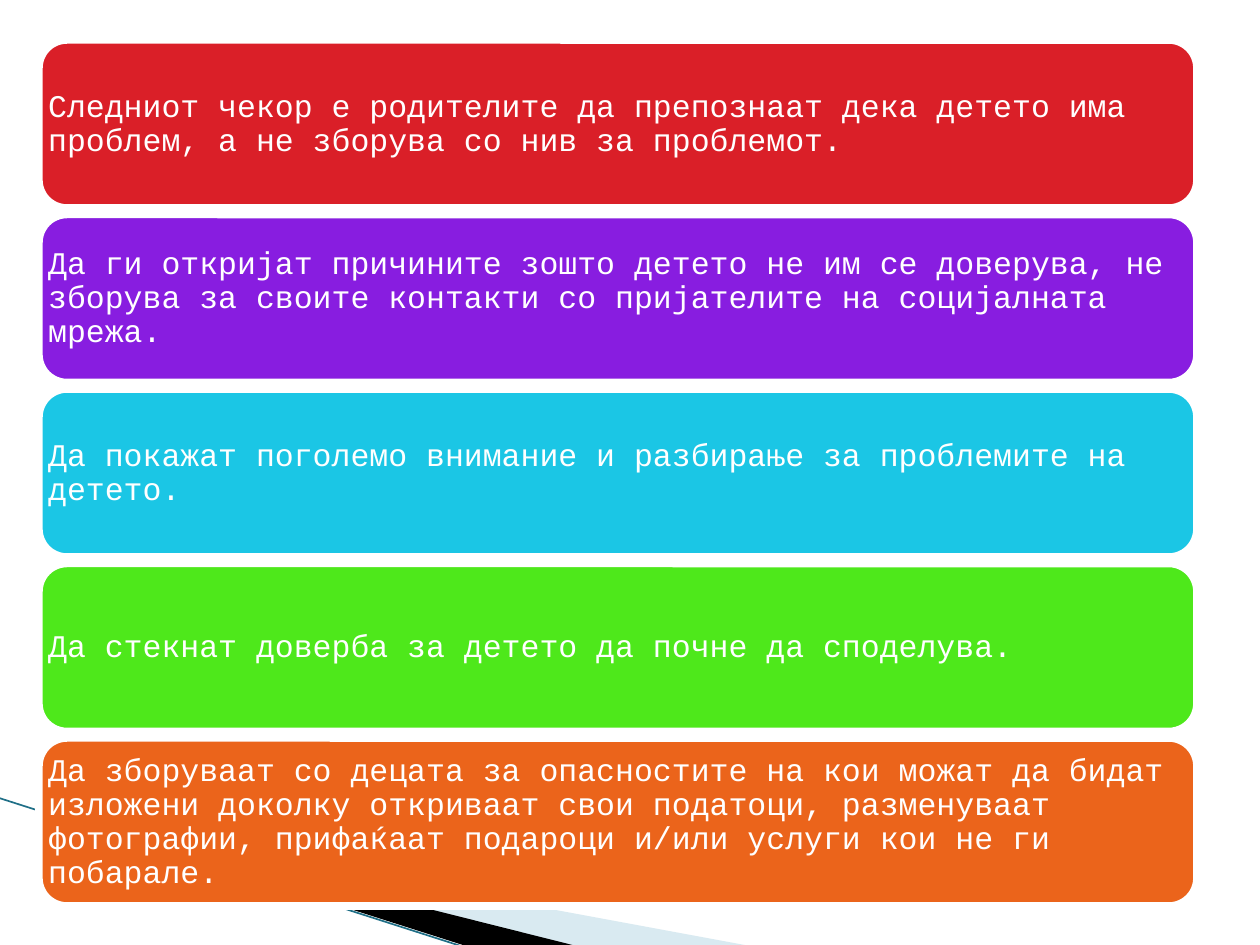
from lxml import etree
from pptx import Presentation
from pptx.dml.color import RGBColor
from pptx.enum.shapes import MSO_CONNECTOR, MSO_SHAPE
from pptx.enum.text import MSO_ANCHOR, PP_ALIGN
from pptx.oxml.ns import qn
from pptx.util import Pt

EMU_PER_PX = 914400 / 126
WHITE = RGBColor(0xFF, 0xFF, 0xFF)
BLACK = RGBColor(0x00, 0x00, 0x00)
PALE_BLUE = RGBColor(0xA0, 0xCB, 0xDC)
TEAL = RGBColor(0x1F, 0x6F, 0x87)
RED = RGBColor(0xDA, 0x1F, 0x28)
PURPLE = RGBColor(0x88, 0x1D, 0xE0)
CYAN = RGBColor(0x1B, 0xC6, 0xE5)
GREEN = RGBColor(0x4E, 0xE8, 0x1B)
ORANGE = RGBColor(0xEB, 0x64, 0x1B)

STEPS = [
    (RED, "Следниот чекор е родителите да препознаат дека детето има проблем, "
          "а не зборува со нив за проблемот."),
    (PURPLE, "Да ги откријат причините зошто детето не им се доверува, "
             "не зборува за своите контакти со пријателите на социјалната мрежа."),
    (CYAN, "Да покажат поголемо внимание и разбирање за проблемите на детето."),
    (GREEN, "Да стекнат доверба за детето да почне да споделува."),
    (ORANGE, "Да зборуваат со децата за опасностите на кои можат да бидат изложени "
             "доколку откриваат свои податоци, разменуваат фотографии, "
             "прифаќаат подароци и/или услуги кои не ги побарале."),
]


def px(n):
    return round(n * EMU_PER_PX)


class SlideBuilder:
    font = "Courier New"
    size = Pt(18)

    def __init__(self, slide):
        self.slide = slide

    def wedge(self, points, color, opacity=100):
        fb = self.slide.shapes.build_freeform(*points[0], scale=EMU_PER_PX)
        fb.add_line_segments(points[1:], close=True)
        sp = fb.convert_to_shape()
        sp.shadow.inherit = False
        sp.fill.solid()
        sp.fill.fore_color.rgb = color
        sp.line.fill.background()
        if opacity < 100:
            clr = sp._element.spPr.find(qn("a:solidFill"))[0]
            etree.SubElement(clr, qn("a:alpha")).set("val", str(opacity * 1000))

    def line(self, x1, y1, x2, y2, color, width):
        cxn = self.slide.shapes.add_connector(
            MSO_CONNECTOR.STRAIGHT, px(x1), px(y1), px(x2), px(y2))
        cxn.line.color.rgb = color
        cxn.line.width = Pt(width)
        etree.SubElement(cxn._element.spPr, qn("a:effectLst"))

    def card(self, x, y, w, h, color, text):
        sp = self.slide.shapes.add_shape(
            MSO_SHAPE.ROUNDED_RECTANGLE, px(x), px(y), px(w), px(h))
        sp.shadow.inherit = False
        sp.fill.solid()
        sp.fill.fore_color.rgb = color
        sp.line.color.rgb = WHITE
        sp.line.width = Pt(4.33)
        tf = sp.text_frame
        tf.word_wrap = True
        tf.vertical_anchor = MSO_ANCHOR.MIDDLE
        tf.margin_left = tf.margin_right = px(1)
        tf.margin_top = tf.margin_bottom = px(1)
        tf.text = text
        p = tf.paragraphs[0]
        p.alignment = PP_ALIGN.LEFT
        p.line_spacing = 0.9
        r = p.runs[0]
        r.font.name = self.font
        r.font.size = self.size
        r.font.color.rgb = WHITE


def main():
    prs = Presentation()
    prs.slide_width, prs.slide_height = px(1260), px(945)
    s = SlideBuilder(prs.slides.add_slide(prs.slide_layouts[6]))

    s.wedge([(69, 820), (750, 946), (575, 946), (69, 819)], PALE_BLUE, 40)
    s.wedge([(67, 818), (576, 946), (469, 947), (68, 819)], BLACK)
    s.line(-1, 798, 467, 948, TEAL, 0.95)

    left, top, width, height, pitch = 39, 40, 1158, 168, 174.5
    for i, (color, text) in enumerate(STEPS):
        s.card(left, top + i * pitch, width, height, color, text)

    prs.save("out.pptx")


if __name__ == "__main__":
    main()
